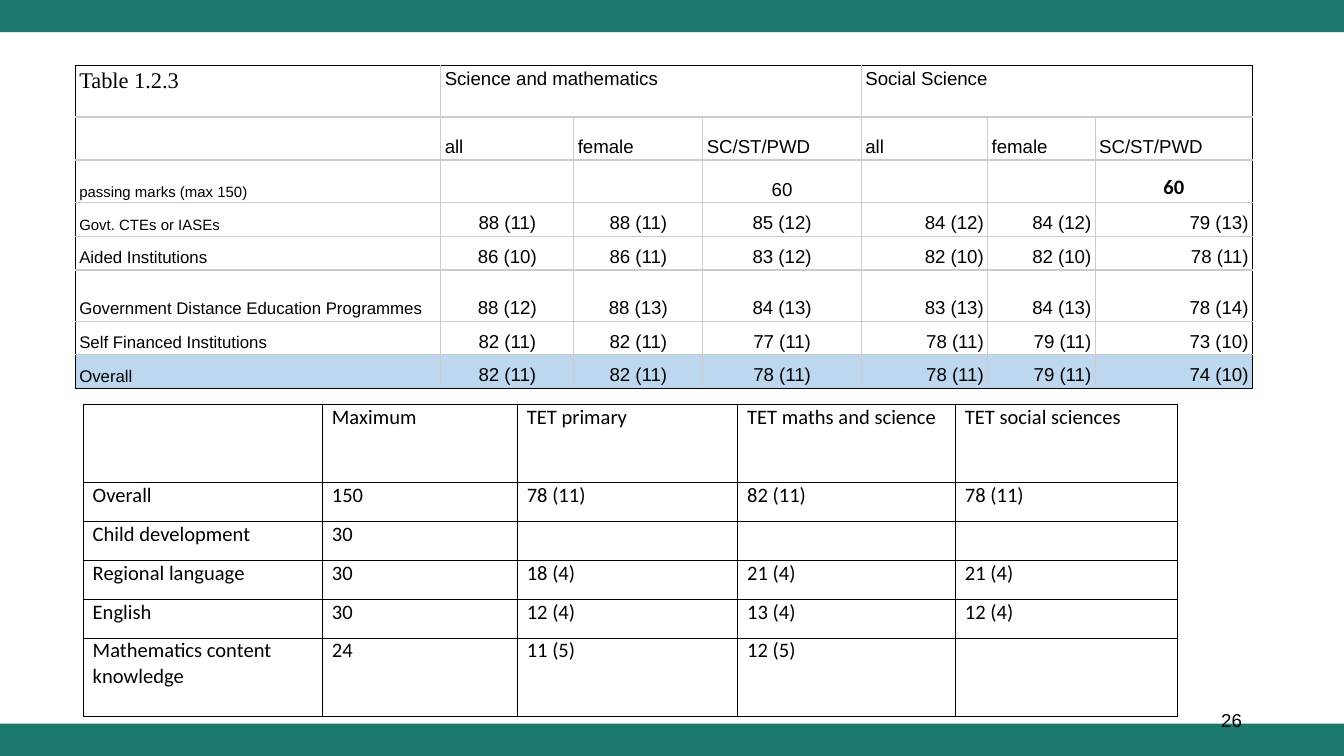
from dataclasses import dataclass
from typing import Optional

from lxml.etree import SubElement
from pptx import Presentation
from pptx.dml.color import RGBColor
from pptx.enum.shapes import MSO_SHAPE
from pptx.enum.text import MSO_ANCHOR as Anchor, PP_ALIGN as Align
from pptx.oxml.ns import qn
from pptx.util import Inches, Pt

WIDTH = 10
HEIGHT = WIDTH * 9 / 16
BAND_HEIGHT = 0.24


@dataclass(frozen=True)
class Theme:
    band: str = "1B786E"
    ink: str = "000000"
    paper: str = "FFFFFF"
    grid: str = "CCCCCC"
    highlight: str = "BDD7EE"
    sans: str = "Arial"
    humanist: str = "Calibri"
    serif: str = "Times New Roman"
    caption: float = 12
    subject: float = 11
    body: float = 10
    label: float = 9
    small: float = 8


THEME = Theme()


@dataclass(frozen=True)
class Style:
    size: float = THEME.body
    font: str = THEME.sans
    bold: bool = False
    align: Align = Align.LEFT
    anchor: Anchor = Anchor.BOTTOM
    fill: Optional[str] = THEME.paper
    inset: tuple[float, float] = (0.03, 0.02)


@dataclass(frozen=True)
class Row:
    height: float
    texts: tuple[str, ...]
    label_size: float = THEME.label
    fill: str = THEME.paper


@dataclass(frozen=True)
class Grid:
    left: float
    top: float
    columns: tuple[float, ...]
    line: str
    line_width: float


SCORES = Grid(0.56, 0.49, (2.72, 0.99, 0.96, 1.18, 0.94, 0.8, 1.17), THEME.grid, 0.75)
SCORE_ROWS = (
    Row(0.38, ("Table 1.2.3", "Science and mathematics", "", "", "Social Science", "", "")),
    Row(0.32, ("", *("all", "female", "SC/ST/PWD") * 2)),
    Row(0.32, ("passing marks (max 150)", "", "", "60", "", "", "60"), THEME.small),
    Row(0.25, ("Govt. CTEs or IASEs", "88 (11)", "88 (11)", "85 (12)",
               "84 (12)", "84 (12)", "79 (13)"), THEME.small),
    Row(0.25, ("Aided Institutions", "86 (10)", "86 (11)", "83 (12)",
               "82 (10)", "82 (10)", "78 (11)")),
    Row(0.38, ("Government Distance Education Programmes", "88 (12)", "88 (13)", "84 (13)",
               "83 (13)", "84 (13)", "78 (14)")),
    Row(0.25, ("Self Financed Institutions", "82 (11)", "82 (11)", "77 (11)",
               "78 (11)", "79 (11)", "73 (10)")),
    Row(0.25, ("Overall", "82 (11)", "82 (11)", "78 (11)",
               "78 (11)", "79 (11)", "74 (10)"), fill=THEME.highlight),
)
CAPTION_ROW, GROUP_ROW, PASS_ROW = 0, 1, 2
GROUP_STARTS, GROUP_SPAN = (1, 4), 3

SUBJECTS = Grid(0.62, 3.01, (1.78, 1.45, 1.64, 1.62, 1.65), THEME.ink, 0.5)
SUBJECT_ROWS = (
    Row(0.58, ("", "Maximum", "TET primary", "TET maths and science", "TET social sciences")),
    Row(0.29, ("Overall", "150", "78 (11)", "82 (11)", "78 (11)")),
    Row(0.29, ("Child development", "30", "", "", "")),
    Row(0.29, ("Regional language", "30", "18 (4)", "21 (4)", "21 (4)")),
    Row(0.29, ("English", "30", "12 (4)", "13 (4)", "12 (4)")),
    Row(0.58, ("Mathematics content knowledge", "24", "11 (5)", "12 (5)", "")),
)
SUBJECT_STYLE = Style(THEME.subject, THEME.humanist, anchor=Anchor.TOP,
                      fill=None, inset=(0.07, 0))


def score_style(row: int, column: int) -> Style:
    fill = SCORE_ROWS[row].fill
    if row == CAPTION_ROW:
        if column == 0:
            return Style(THEME.caption, THEME.serif, anchor=Anchor.TOP)
        return Style(anchor=Anchor.TOP)
    if column == 0:
        return Style(SCORE_ROWS[row].label_size, fill=fill)
    if row == GROUP_ROW:
        return Style()
    if row == PASS_ROW:
        if column == len(SCORES.columns) - 1:
            return Style(THEME.subject, THEME.humanist, True, Align.CENTER)
        return Style(align=Align.CENTER)
    return Style(align=Align.CENTER if column < GROUP_STARTS[1] else Align.RIGHT, fill=fill)


def format_paragraph(paragraph, style: Style) -> None:
    paragraph.alignment = style.align
    paragraph.font.size = Pt(style.size)
    paragraph.font.name = style.font
    paragraph.font.bold = style.bold
    paragraph.font.color.rgb = RGBColor.from_string(THEME.ink)


def fill_cell(cell, text: str, style: Style) -> None:
    cell.margin_left = cell.margin_right = Inches(style.inset[0])
    cell.margin_top = cell.margin_bottom = Inches(style.inset[1])
    cell.vertical_anchor = style.anchor
    if text:
        cell.text = text
    format_paragraph(cell.text_frame.paragraphs[0], style)
    if style.fill:
        cell.fill.solid()
        cell.fill.fore_color.rgb = RGBColor.from_string(style.fill)
    else:
        cell.fill.background()


def draw_borders(cell, edges: dict[str, str], width: float) -> None:
    """Draw the edges, keyed L, R, T, B in that order, in their colours."""
    properties = cell._tc.get_or_add_tcPr()
    for side, colour in edges.items():
        line = SubElement(properties, qn(f"a:ln{side}"), w=str(Pt(width)))
        SubElement(SubElement(line, qn("a:solidFill")), qn("a:srgbClr"), val=colour)


def add_grid(slide, grid: Grid, rows: tuple[Row, ...]):
    table = slide.shapes.add_table(
        len(rows), len(grid.columns), Inches(grid.left), Inches(grid.top),
        Inches(sum(grid.columns)), Inches(sum(row.height for row in rows))).table
    table.first_row = table.horz_banding = False
    for column, width in zip(table.columns, grid.columns):
        column.width = Inches(width)
    for table_row, row in zip(table.rows, rows):
        table_row.height = Inches(row.height)
    return table


def fill_grid(table, grid: Grid, rows: tuple[Row, ...], style_at) -> None:
    last_row, last_column = len(rows) - 1, len(grid.columns) - 1
    for r, row in enumerate(rows):
        for c, text in enumerate(row.texts):
            cell = table.cell(r, c)
            right = c + cell.span_width - 1 if cell.is_merge_origin else c
            outer = {"L": c == 0, "R": right == last_column, "T": r == 0, "B": r == last_row}
            edges = {side: THEME.ink if is_outer else grid.line
                     for side, is_outer in outer.items()
                     if is_outer or not (cell.is_spanned and side in "LR")}
            draw_borders(cell, edges, grid.line_width)
            fill_cell(cell, text, style_at(r, c))


def add_band(slide, top: float) -> None:
    band = slide.shapes.add_shape(MSO_SHAPE.RECTANGLE, 0, Inches(top),
                                  Inches(WIDTH), Inches(BAND_HEIGHT))
    band.shadow.inherit = False
    band.fill.solid()
    band.fill.fore_color.rgb = RGBColor.from_string(THEME.band)
    band.line.fill.background()


def add_page_number(slide, number: str) -> None:
    frame = slide.shapes.add_textbox(Inches(7.06), Inches(5.21),
                                     Inches(2.25), Inches(0.3)).text_frame
    frame.word_wrap = True
    frame.vertical_anchor = Anchor.MIDDLE
    frame.margin_left = frame.margin_right = Inches(0.07)
    frame.margin_top = frame.margin_bottom = Inches(0.04)
    frame.text = number
    format_paragraph(frame.paragraphs[0], Style(align=Align.RIGHT))


def main() -> None:
    deck = Presentation()
    deck.slide_width, deck.slide_height = Inches(WIDTH), Inches(HEIGHT)
    slide = deck.slides.add_slide(deck.slide_layouts[6])
    for top in (HEIGHT - BAND_HEIGHT, 0):
        add_band(slide, top)
    add_page_number(slide, "26")

    scores = add_grid(slide, SCORES, SCORE_ROWS)
    for start in GROUP_STARTS:
        scores.cell(CAPTION_ROW, start).merge(scores.cell(CAPTION_ROW, start + GROUP_SPAN - 1))
    fill_grid(scores, SCORES, SCORE_ROWS, score_style)

    subjects = add_grid(slide, SUBJECTS, SUBJECT_ROWS)
    fill_grid(subjects, SUBJECTS, SUBJECT_ROWS, lambda row, column: SUBJECT_STYLE)
    deck.save("out.pptx")


if __name__ == "__main__":
    main()
